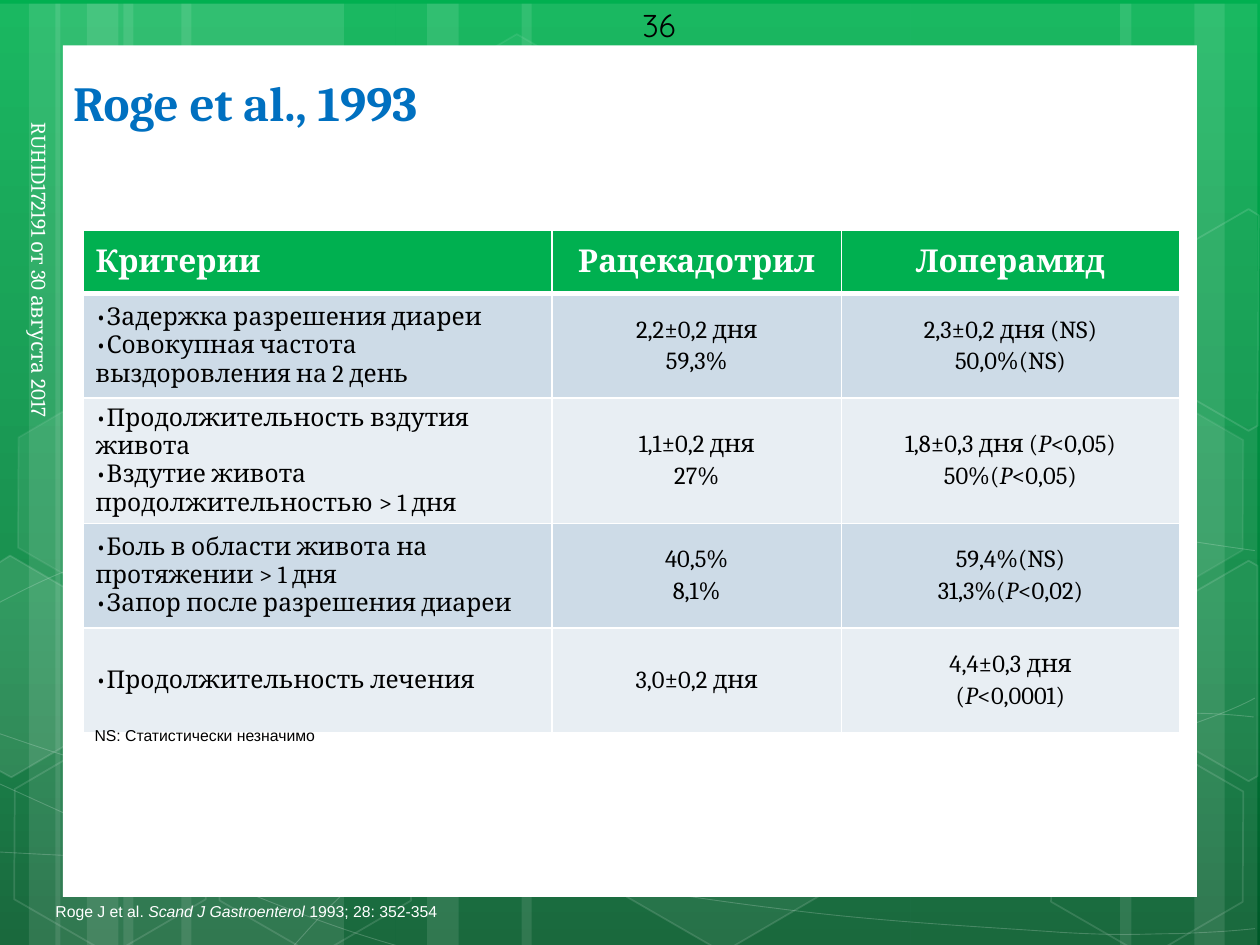
from copy import deepcopy

from lxml.etree import SubElement
from pptx import Presentation
from pptx.dml.color import RGBColor
from pptx.enum.shapes import MSO_SHAPE
from pptx.enum.text import MSO_ANCHOR, PP_ALIGN
from pptx.oxml.ns import qn
from pptx.util import Inches, Pt

THEME = {
    "serif": "Cambria", "sans": "Arial", "number_font": "Quicksand",
    "white": "FFFFFF", "black": "000000", "title": "0070C0", "header": "00B050",
    "bands": ("CDDBE7", "E8EEF3"),
    "gradient": ((0, "00B050"), (0.62, "00843C"), (1, "005828")),
    "title_size": 28, "header_size": 18, "cell_size": 14, "small_size": 12, "note_size": 9,
}

TITLE = "Roge et al., 1993"
# Asterisks enclose italic text.
HEADER = ("Критерии", "Рацекадотрил", "Лоперамид")
ROWS = [
    (["•Задержка разрешения диареи", "•Совокупная частота выздоровления на 2 день"],
     ["2,2±0,2 дня", "59,3%"], ["2,3±0,2 дня (NS)", "50,0%(NS)"]),
    (["•Продолжительность вздутия живота", "•Вздутие живота продолжительностью > 1 дня"],
     ["1,1±0,2 дня", "27%"], ["1,8±0,3 дня (*P*<0,05)", "50%(*P*<0,05)"]),
    (["•Боль в области живота на протяжении > 1 дня", "•Запор после разрешения диареи"],
     ["40,5%", "8,1%"], ["59,4%(NS)", "31,3%(*P*<0,02)"]),
    (["•Продолжительность лечения"],
     ["3,0±0,2 дня"], ["4,4±0,3 дня", "(*P*<0,0001)"]),
]
COLUMN_WIDTHS = (3.72, 2.3, 2.68)
HEADER_HEIGHT, ROW_HEIGHT = 0.5, 0.83
CITATION = "Roge J et al. *Scand J Gastroenterol *1993; 28: 352-354"
FOOTNOTE = "NS: Статистически незначимо"
PAGE_NUMBER = "36"
APPROVAL = "RUHID172191 от 30 августа 2017"

# Left and width of each translucent stripe
STRIPES = [(0.98, 1.75), (-0.02, 0.5), (0.23, 0.83), (1.44, 1.7), (0.44, 0.5), (0.69, 0.83),
           (7.23, 1.75), (9.48, 0.5), (8.89, 0.83), (4.14, 3.09), (3.14, 0.5), (3.39, 0.83)]
# Start point, then cubic segments of two control points and an end point
CURVES = [
    [(-0.04, 6.76), (0.5, 6.79), (1.04, 6.82), (1.79, 6.81), (2.54, 6.8), (3.47, 6.78),
     (4.47, 6.68), (5.47, 6.58), (6.89, 6.39), (7.81, 6.2), (8.72, 6.01), (9.66, 5.71),
     (9.96, 5.54)],
    [(-0.04, 4.8), (0.25, 4.65), (0.54, 4.49), (1.11, 4.34), (1.67, 4.19), (2.48, 3.98),
     (3.36, 3.9), (4.25, 3.83), (5.33, 3.82), (6.43, 3.9), (7.53, 3.98), (9.36, 4.29),
     (9.96, 4.37)],
    [(-0.05, 6.2), (1.16, 6.75), (2.36, 7.3), (3.24, 7.53)],
    [(-0.04, 5.81), (0.28, 5.92), (0.59, 6.03), (1.17, 6.19), (1.75, 6.35), (2.62, 6.59),
     (3.46, 6.76), (4.29, 6.93), (5.34, 7.11), (6.17, 7.21), (7, 7.32), (7.89, 7.36),
     (8.42, 7.4), (8.95, 7.43), (9.08, 7.41), (9.34, 7.41), (9.6, 7.4), (9.78, 7.39),
     (9.96, 7.37)],
    [(2.31, 7.53), (2.49, 7.33), (2.67, 7.12), (2.91, 6.94), (3.15, 6.76), (3.49, 6.56),
     (3.77, 6.42), (4.05, 6.28), (4.22, 6.22), (4.59, 6.12), (4.95, 6.02), (5.62, 5.88),
     (5.98, 5.81), (6.33, 5.74), (6.38, 5.75), (6.69, 5.72), (7, 5.69), (7.49, 5.67),
     (7.83, 5.66), (8.18, 5.64), (8.75, 5.66), (8.75, 5.66), (8.97, 5.66), (9.2, 5.66),
     (9.42, 5.66), (9.6, 5.66), (9.77, 5.67), (9.95, 5.69)],
]
# Left, top, fill opacity (None for no fill), line opacity
HEXAGONS = [(3.23, 0.39, 4, 8), (4.86, 5.92, 6, 12), (0, 5.94, None, 12), (0.03, 3.15, 7, 8),
            (1.63, 5.95, None, 12), (8.23, 5.96, None, 12), (8.23, 3.17, 7, 8)]
# Outline points and fill opacity of hexagons cut by the slide edge
CUT_HEXAGONS = [
    ([(-0.03, 4.48), (0.08, 4.41), (0.85, 4.86), (0.84, 5.73), (0.09, 6.17), (-0.02, 6.11)], 10),
    ([(9.15, 4.89), (9.91, 4.45), (9.98, 4.49), (9.98, 6.16), (9.91, 6.2), (9.15, 5.76)], 4),
    ([(9.15, 2.1), (9.91, 1.66), (9.99, 1.71), (9.98, 3.38), (9.91, 3.42), (9.15, 2.98)], None),
]


def color(value):
    return RGBColor.from_string(value)


def style_white(shape, fill_opacity=None, line_opacity=None, line_width=1):
    """Give a shape a white fill and line at the given percentages, None meaning absent."""
    shape.shadow.inherit = False
    for fill, opacity, tag in ((shape.fill, fill_opacity, "a:solidFill"),
                               (shape.line.fill, line_opacity, "a:ln/a:solidFill")):
        if opacity is None:
            fill.background()
            continue
        fill.solid()
        fill.fore_color.rgb = color(THEME["white"])
        if opacity < 100:
            steps = "/".join(qn(step) for step in tag.split("/"))
            solid = shape.element.spPr.find(steps)
            SubElement(solid[0], qn("a:alpha"), val=str(opacity * 1000))
    if line_opacity is not None:
        shape.line.width = Pt(line_width)


def add_outline(shapes, points, close):
    corners = [(Inches(x), Inches(y)) for x, y in points]
    builder = shapes.build_freeform(*corners[0])
    builder.add_line_segments(corners[1:], close=close)
    return builder.convert_to_shape()


def add_curve(shapes, points):
    """Add an open outline and join each three of its segments into one cubic."""
    shape = add_outline(shapes, points, False)
    segments = list(shape.element.iter(qn("a:lnTo")))
    for first in range(0, len(segments), 3):
        outline = segments[first].getparent()
        cubic = SubElement(outline, qn("a:cubicBezTo"))
        for segment in segments[first:first + 3]:
            cubic.append(segment[0])
            outline.remove(segment)
    return shape


def write_text(frame, lines, font, size, text_color, bold=False, align=PP_ALIGN.LEFT, after=0):
    for index, line in enumerate(lines):
        paragraph = frame.add_paragraph() if index else frame.paragraphs[0]
        for position, part in enumerate(line.split("*")):
            run = paragraph.add_run()
            run.text = part
            if position % 2:
                run.font.italic = True
        paragraph.alignment = align
        paragraph.space_after = Pt(after)
        paragraph.font.name = font
        paragraph.font.size = Pt(size)
        paragraph.font.bold = bold
        paragraph.font.color.rgb = color(text_color)


def add_label(shapes, box, text, font, size, text_color, note=False):
    """Add a one-line text box; a note has no margins and sits on its bottom edge."""
    shape = shapes.add_textbox(*map(Inches, box))
    frame = shape.text_frame
    frame.word_wrap = True
    if note:
        frame.margin_left = frame.margin_top = frame.margin_right = frame.margin_bottom = 0
        frame.vertical_anchor = MSO_ANCHOR.BOTTOM
    write_text(frame, [text], font, size, text_color)
    return shape


def set_borders(cell, top, bottom):
    properties = cell._tc.get_or_add_tcPr()
    widths = {"a:lnL": 1, "a:lnR": 1, "a:lnT": top, "a:lnB": bottom}
    for index, (tag, width) in enumerate(widths.items()):
        line = SubElement(properties, qn(tag), w=str(Pt(width)))
        fill = SubElement(line, qn("a:solidFill"))
        SubElement(fill, qn("a:srgbClr"), val=THEME["white"])
        properties.insert(index, line)


def draw_background(slide):
    fill = slide.background.fill
    fill.gradient()
    fill.gradient_angle = 270
    last = slide.background._cSld.find(".//" + qn("a:gsLst"))[-1]
    last.addprevious(deepcopy(last))
    for stop, (position, value) in zip(fill.gradient_stops, THEME["gradient"]):
        stop.position = position
        stop.color.rgb = color(value)

    shapes = slide.shapes
    for left, width in STRIPES:
        box = map(Inches, (left, 0.03, width, 7.5))
        style_white(shapes.add_shape(MSO_SHAPE.RECTANGLE, *box), 10)
    for curve in CURVES:
        style_white(add_curve(shapes, curve), None, 20, 0.5)
    for left, top, fill_opacity, line_opacity in HEXAGONS:
        hexagon = shapes.add_shape(MSO_SHAPE.HEXAGON, *map(Inches, (left, top, 1.75, 1.52)))
        hexagon.adjustments[0] = 0.285
        hexagon.rotation = 30
        style_white(hexagon, fill_opacity, line_opacity)
    for points, fill_opacity in CUT_HEXAGONS:
        style_white(add_outline(shapes, points, True), fill_opacity, 12)
    panel = shapes.add_shape(MSO_SHAPE.RECTANGLE, *map(Inches, (0.5, 0.36, 9, 6.76)))
    style_white(panel, 100)


def draw_title(slide):
    title = slide.shapes.title
    title.left, title.top, title.width, title.height = map(Inches, (0.48, 0.08, 8.43, 1.01))
    title.text_frame.vertical_anchor = MSO_ANCHOR.BOTTOM
    write_text(title.text_frame, [TITLE], THEME["serif"], THEME["title_size"], THEME["title"], True)
    slide.shapes._spTree.append(title.element)


def draw_table(slide):
    heights = [HEADER_HEIGHT] + [ROW_HEIGHT] * len(ROWS)
    box = map(Inches, (0.66, 1.83, sum(COLUMN_WIDTHS), sum(heights)))
    table = slide.shapes.add_table(len(heights), len(COLUMN_WIDTHS), *box).table
    for column, width in zip(table.columns, COLUMN_WIDTHS):
        column.width = Inches(width)
    for row_index, content in enumerate([[[text] for text in HEADER]] + ROWS):
        table.rows[row_index].height = Inches(heights[row_index])
        header = row_index == 0
        for column_index, lines in enumerate(content):
            cell = table.cell(row_index, column_index)
            cell.vertical_anchor = MSO_ANCHOR.MIDDLE
            cell.fill.solid()
            cell.fill.fore_color.rgb = color(
                THEME["header"] if header else THEME["bands"][(row_index - 1) % 2])
            set_borders(cell, 3 if row_index == 1 else 1, 3 if header else 1)
            write_text(cell.text_frame, lines, THEME["serif"],
                       THEME["header_size" if header else "cell_size"],
                       THEME["white" if header else "black"], header,
                       PP_ALIGN.CENTER if column_index else PP_ALIGN.LEFT,
                       2 if column_index and not header else 0)


def main():
    presentation = Presentation()
    presentation.slide_width, presentation.slide_height = Inches(10), Inches(7.5)
    slide = presentation.slides.add_slide(presentation.slide_layouts[5])
    draw_background(slide)
    draw_title(slide)
    draw_table(slide)
    shapes, white, black = slide.shapes, THEME["white"], THEME["black"]
    for box, text, ink in (((0.44, 7.16, 8.88, 0.15), CITATION, white),
                           ((0.75, 5.76, 3.31, 0.15), FOOTNOTE, black)):
        add_label(shapes, box, text, THEME["sans"], THEME["note_size"], ink, note=True)
    add_label(shapes, (5, 0, 1.46, 0.4), PAGE_NUMBER, THEME["number_font"],
              THEME["header_size"], black)
    approval = add_label(shapes, (-2.16, 3.2, 4.95, 0.3), APPROVAL, THEME["serif"],
                         THEME["small_size"], white)
    approval.rotation = 90
    presentation.save("out.pptx")


if __name__ == "__main__":
    main()
